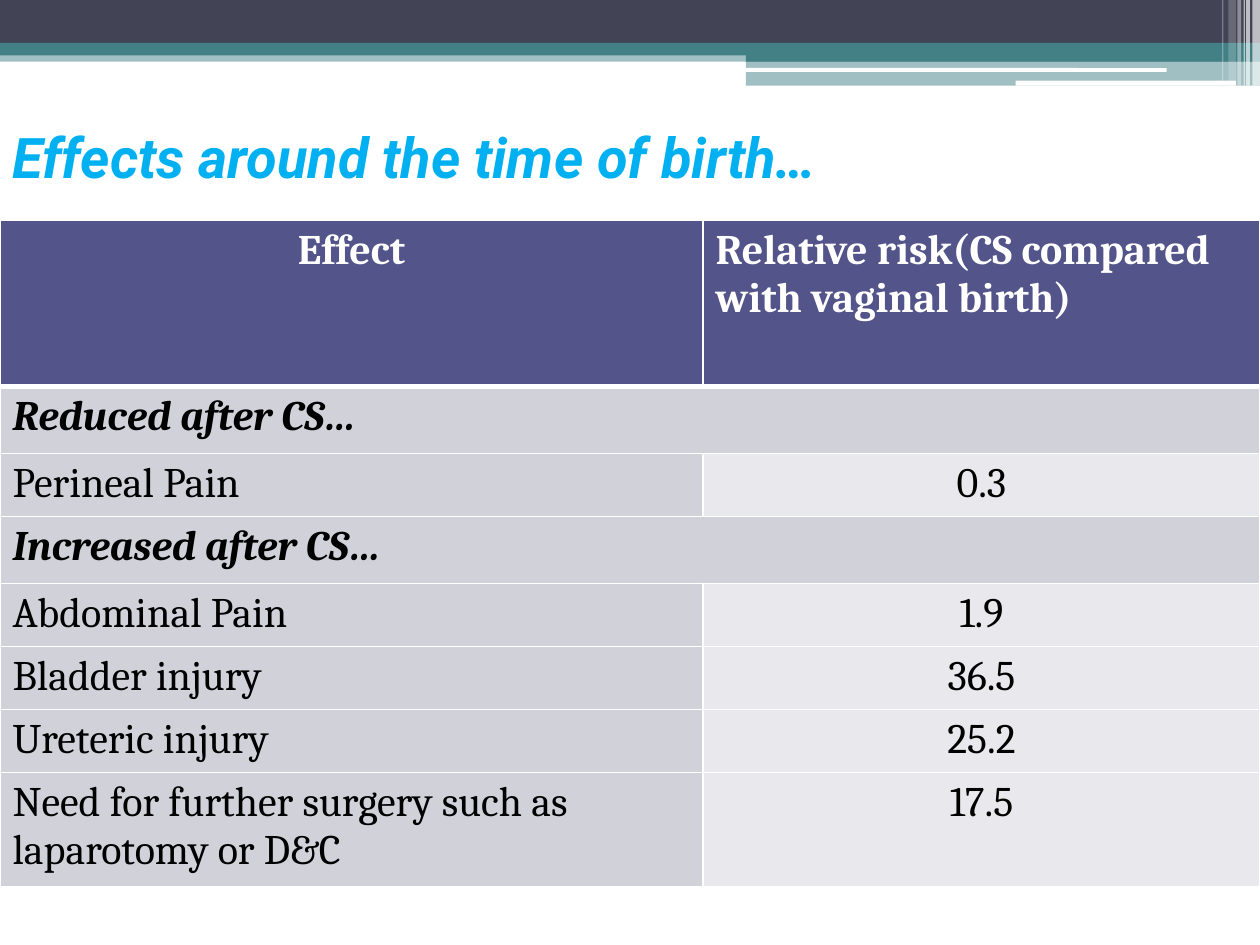
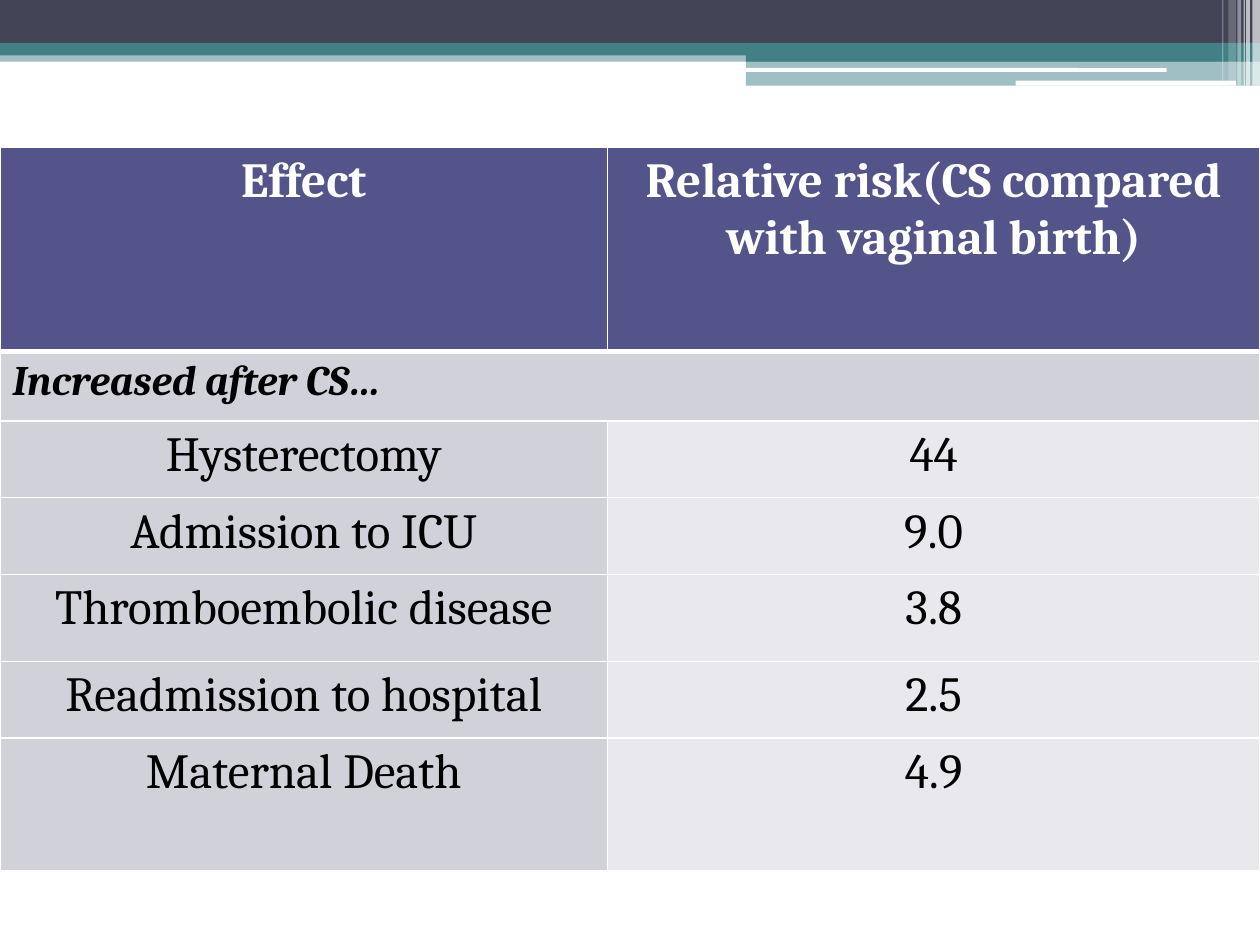
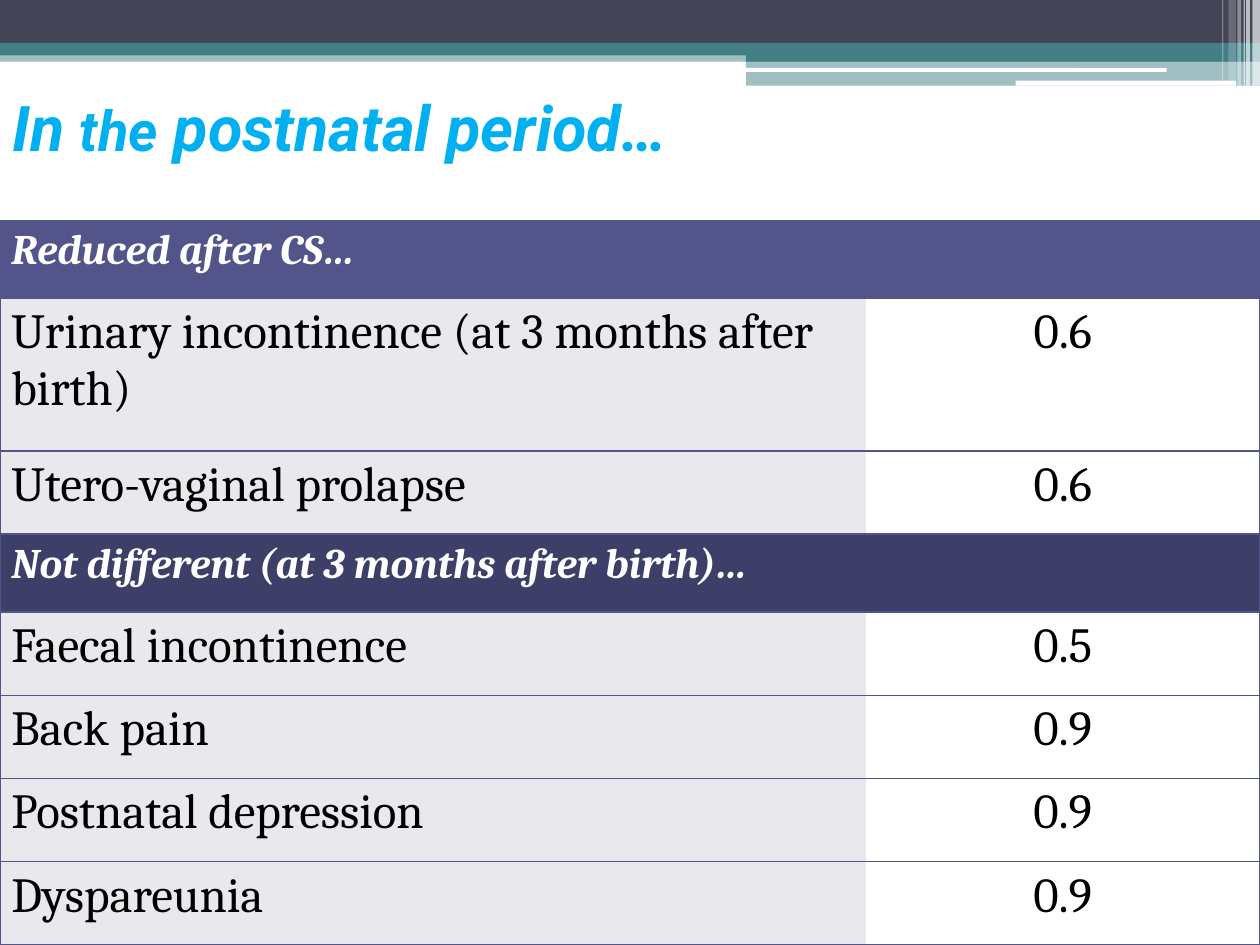
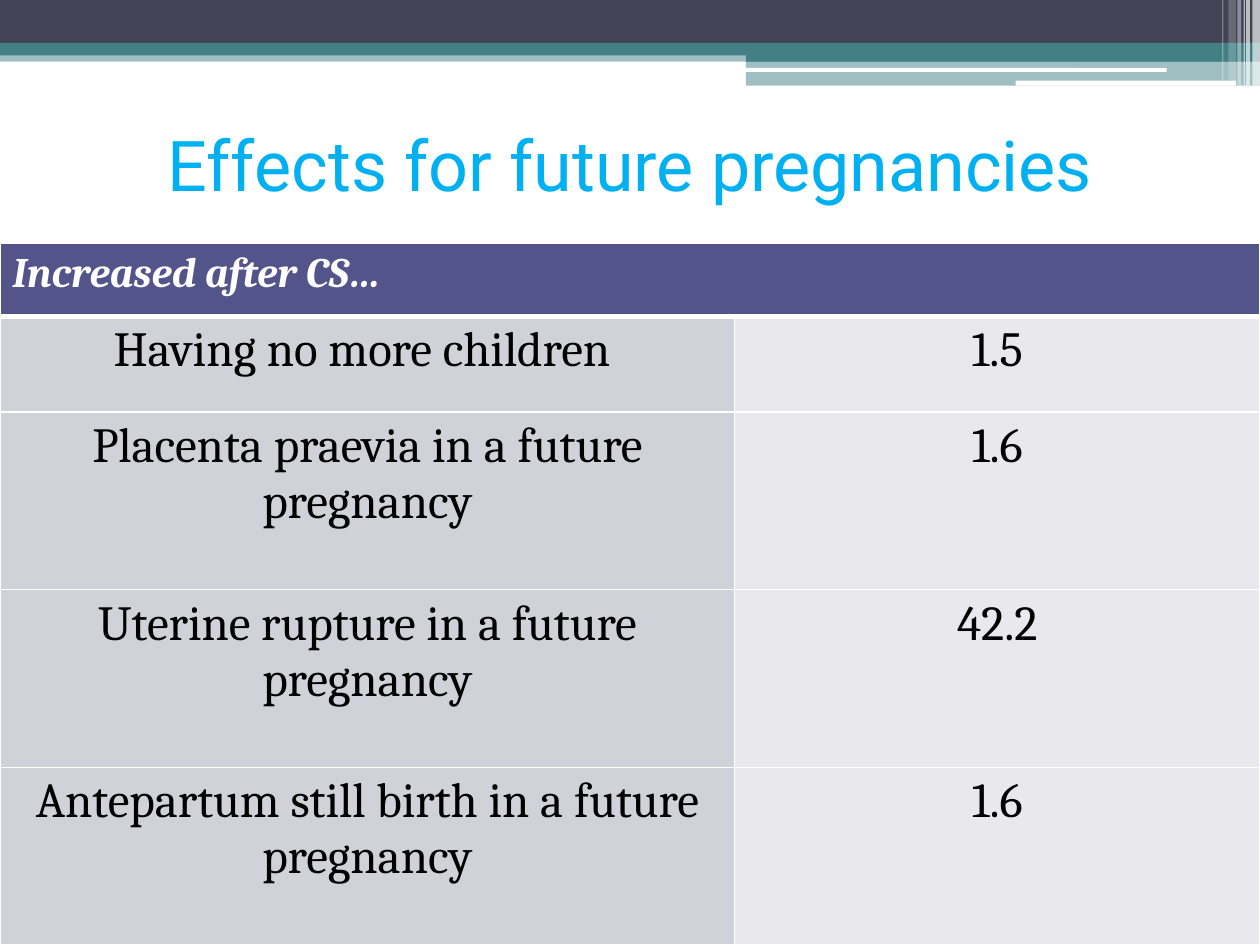
from dataclasses import dataclass
from typing import Optional

from lxml.etree import SubElement
from pptx import Presentation
from pptx.dml.color import RGBColor
from pptx.enum.shapes import MSO_SHAPE
from pptx.enum.text import MSO_ANCHOR, PP_ALIGN
from pptx.oxml.ns import qn
from pptx.util import Inches, Pt

SLATE, TEAL, WHITE, BLACK = "424456", "438086", "FFFFFF", "000000"
INDIGO, DARK_INDIGO, GREY, PALE_GREY = "53548A", "3E3F68", "D1D1DA", "E9E9ED"
TITLE_BLUE = "00B0F0"
TITLE_FONT, BODY_FONT = "Roboto", "Cambria"
LEFT, CENTER = PP_ALIGN.LEFT, PP_ALIGN.CENTER


@dataclass(frozen=True)
class Band:
    left: float
    top: float
    width: float
    height: float
    colour: str = WHITE
    opacity: int = 100
    rounded: bool = False


@dataclass(frozen=True)
class RowStyle:
    fills: tuple[str, str]
    colour: str = BLACK
    bold: bool = False
    italic: bool = False
    rule_below: float = 1


@dataclass(frozen=True)
class Row:
    """One table row; a single text spans both columns."""
    height: float
    texts: tuple[str, ...]
    style: RowStyle
    size: int = 28
    aligns: tuple[PP_ALIGN, PP_ALIGN] = (CENTER, CENTER)


@dataclass(frozen=True)
class RiskTable:
    top: float
    columns: tuple[float, float]
    rows: tuple[Row, ...]
    line_colour: str = WHITE
    inner_vertical: bool = True
    side_margin: float = 0.1


@dataclass(frozen=True)
class Title:
    left: float
    top: float
    width: float
    height: float
    spans: tuple[tuple[str, int], ...]
    emphasis: bool = True
    align: PP_ALIGN = LEFT
    anchor: MSO_ANCHOR = MSO_ANCHOR.MIDDLE


BANDS = (
    Band(0, 0.4, 10, 0.09, TEAL, 50),
    Band(0, 0, 10, 0.34, SLATE),
    Band(0, 0.34, 10, 0.1, TEAL),
    Band(5.92, 0.39, 4.08, 0.1, TEAL),
    Band(5.92, 0.48, 4.08, 0.2, TEAL, 50),
    Band(5.91, 0.54, 3.35, 0.03, rounded=True),
    Band(8.06, 0.64, 1.75, 0.04, rounded=True),
    Band(9.94, 0, 0.06, 0.68, opacity=65),
    Band(9.89, 0, 0.03, 0.68, opacity=65),
    Band(9.87, 0, 0.01, 0.68, opacity=60),
    Band(9.82, 0, 0.03, 0.68, opacity=40),
    Band(9.75, 0, 0.06, 0.64, opacity=20),
    Band(9.7, 0, 0.01, 0.64, opacity=30),
)

HEADING = RowStyle((INDIGO, INDIGO), WHITE, bold=True, rule_below=3)
TOP_SECTION = RowStyle((INDIGO, INDIGO), WHITE, bold=True, italic=True, rule_below=3)
SECTION = RowStyle((GREY, GREY), bold=True, italic=True)
DATA = RowStyle((GREY, PALE_GREY))
LINED_TOP = RowStyle((INDIGO, INDIGO), WHITE, bold=True, italic=True)
LINED_SECTION = RowStyle((DARK_INDIGO, DARK_INDIGO), WHITE, bold=True, italic=True)
LINED_DATA = RowStyle((PALE_GREY, WHITE))

RISK_HEADING = "Relative risk(CS compared with vaginal birth)"
REDUCED, INCREASED = "Reduced after CS…", "Increased after CS…"


def section(height: float, text: str, style: RowStyle) -> Row:
    return Row(height, (text,), style, 24, (LEFT, LEFT))


def birth_row(height: float, effect: str, risk: str) -> Row:
    return Row(height, (effect, risk), DATA, 24, (LEFT, CENTER))


def postnatal_row(height: float, effect: str, risk: str) -> Row:
    return Row(height, (effect, risk), LINED_DATA, aligns=(LEFT, CENTER))


BIRTH_TABLE = RiskTable(1.75, (5.58, 4.42), (
    Row(1.32, ("Effect", RISK_HEADING), HEADING, 24, (CENTER, LEFT)),
    section(0.53, REDUCED, SECTION),
    birth_row(0.5, "Perineal Pain", "0.3"),
    section(0.53, INCREASED, SECTION),
    birth_row(0.5, "Abdominal Pain", "1.9"),
    birth_row(0.5, "Bladder injury", "36.5"),
    birth_row(0.5, "Ureteric injury", "25.2"),
    birth_row(0.91, "Need for further surgery such as laparotomy or D&C", "17.5"),
))

SEVERE_TABLE = RiskTable(1.17, (4.82, 5.18), (
    Row(1.62, ("Effect", RISK_HEADING), HEADING),
    section(0.55, INCREASED, SECTION),
    Row(0.61, ("Hysterectomy", "44"), DATA),
    Row(0.61, ("Admission to ICU", "9.0"), DATA),
    Row(0.69, ("Thromboembolic disease", "3.8"), DATA),
    Row(0.61, ("Readmission to hospital", "2.5"), DATA),
    Row(1.05, ("Maternal Death", "4.9"), DATA),
))

POSTNATAL_TABLE = RiskTable(1.75, (6.87, 3.13), (
    section(0.62, REDUCED, LINED_TOP),
    postnatal_row(1.21, "Urinary incontinence (at 3 months after birth)", "0.6"),
    postnatal_row(0.66, "Utero-vaginal prolapse", "0.6"),
    section(0.62, "Not different (at 3 months after birth)…", LINED_SECTION),
    postnatal_row(0.66, "Faecal incontinence", "0.5"),
    postnatal_row(0.66, "Back pain", "0.9"),
    postnatal_row(0.66, "Postnatal depression", "0.9"),
    postnatal_row(0.66, "Dyspareunia", "0.9"),
), line_colour=INDIGO, inner_vertical=False, side_margin=0.09)

FUTURE_TABLE = RiskTable(1.93, (5.83, 4.17), (
    section(0.58, INCREASED, TOP_SECTION),
    Row(0.76, ("Having no more children ", "1.5"), DATA),
    Row(1.41, ("Placenta praevia in a future pregnancy", "1.6"), DATA),
    Row(1.41, ("Uterine rupture in a future pregnancy", "42.2"), DATA),
    Row(1.41, ("Antepartum still birth in a future pregnancy", "1.6"), DATA),
))

PAGES = (
    (Title(0, 0.92, 10, 1.25, (("Effects around the time of birth…", 32),),
           anchor=MSO_ANCHOR.TOP), BIRTH_TABLE),
    (None, SEVERE_TABLE),
    (Title(0, 0.42, 9, 1.17, (("In ", 36), ("the", 32), (" postnatal period…", 36))),
     POSTNATAL_TABLE),
    (Title(0.5, 0.67, 9, 1.25, (("Effects for future pregnancies", 40),),
           emphasis=False, align=CENTER), FUTURE_TABLE),
)


def rgb(colour: str) -> RGBColor:
    return RGBColor.from_string(colour)


def add_span(para, text: str, *, size: int, font: str, colour: str,
             bold: bool = False, italic: bool = False) -> None:
    span = para.add_run()
    span.text = text
    span.font.size = Pt(size)
    span.font.name = font
    span.font.bold = bold
    span.font.italic = italic
    span.font.color.rgb = rgb(colour)


def add_band(page, band: Band) -> None:
    kind = MSO_SHAPE.ROUNDED_RECTANGLE if band.rounded else MSO_SHAPE.RECTANGLE
    shape = page.shapes.add_shape(kind, Inches(band.left), Inches(band.top),
                                  Inches(band.width), Inches(band.height))
    shape.shadow.inherit = False
    shape.line.fill.background()
    shape.fill.solid()
    shape.fill.fore_color.rgb = rgb(band.colour)
    if band.opacity < 100:
        colour = shape.fill._xPr.find(qn("a:solidFill"))[0]
        SubElement(colour, qn("a:alpha"), val=str(band.opacity * 1000))


def add_title(page, title: Title) -> None:
    box = page.shapes.add_textbox(Inches(title.left), Inches(title.top),
                                  Inches(title.width), Inches(title.height))
    frame = box.text_frame
    frame.word_wrap = True
    frame.vertical_anchor = title.anchor
    para = frame.paragraphs[0]
    para.alignment = title.align
    for text, size in title.spans:
        add_span(para, text, size=size, font=TITLE_FONT, colour=TITLE_BLUE,
                 bold=title.emphasis, italic=title.emphasis)


def add_border(cell, side: str, colour: str, width: float) -> None:
    """Line one side (L, R, T or B, in that order); zero width means no line."""
    line = SubElement(cell._tc.get_or_add_tcPr(), qn(f"a:ln{side}"), w=str(Pt(width)))
    if width:
        fill = SubElement(line, qn("a:solidFill"))
        SubElement(fill, qn("a:srgbClr"), val=colour)
    else:
        SubElement(line, qn("a:noFill"))


def add_risk_table(page, risks: RiskTable) -> None:
    height = sum(row.height for row in risks.rows)
    table = page.shapes.add_table(len(risks.rows), 2, Inches(0), Inches(risks.top),
                                  Inches(10), Inches(height)).table
    table.first_row = table.horz_banding = False
    for column, width in zip(table.columns, risks.columns):
        column.width = Inches(width)
    inner = 1 if risks.inner_vertical else 0
    rule_above = 1.0
    for index, row in enumerate(risks.rows):
        table.rows[index].height = Inches(row.height)
        spanned = len(row.texts) == 1
        for column in range(2):
            cell = table.cell(index, column)
            between = 0 if spanned else inner
            add_border(cell, "L", risks.line_colour, between if column else 1)
            add_border(cell, "R", risks.line_colour, 1 if column or spanned else between)
            add_border(cell, "T", risks.line_colour, rule_above)
            add_border(cell, "B", risks.line_colour, row.style.rule_below)
            cell.fill.solid()
            cell.fill.fore_color.rgb = rgb(row.style.fills[column])
            cell.margin_left = cell.margin_right = Inches(risks.side_margin)
        if spanned:
            table.cell(index, 0).merge(table.cell(index, 1))
        for column, text in enumerate(row.texts):
            para = table.cell(index, column).text_frame.paragraphs[0]
            para.alignment = row.aligns[column]
            add_span(para, text, size=row.size, font=BODY_FONT, colour=row.style.colour,
                     bold=row.style.bold, italic=row.style.italic)
        rule_above = row.style.rule_below


def add_page(deck, title: Optional[Title], risks: RiskTable) -> None:
    page = deck.slides.add_slide(deck.slide_layouts[6])
    for band in BANDS:
        add_band(page, band)
    if title:
        add_title(page, title)
    add_risk_table(page, risks)


def main() -> None:
    deck = Presentation()
    deck.slide_width, deck.slide_height = Inches(10), Inches(7.5)
    for title, risks in PAGES:
        add_page(deck, title, risks)
    deck.save("out.pptx")


if __name__ == "__main__":
    main()
